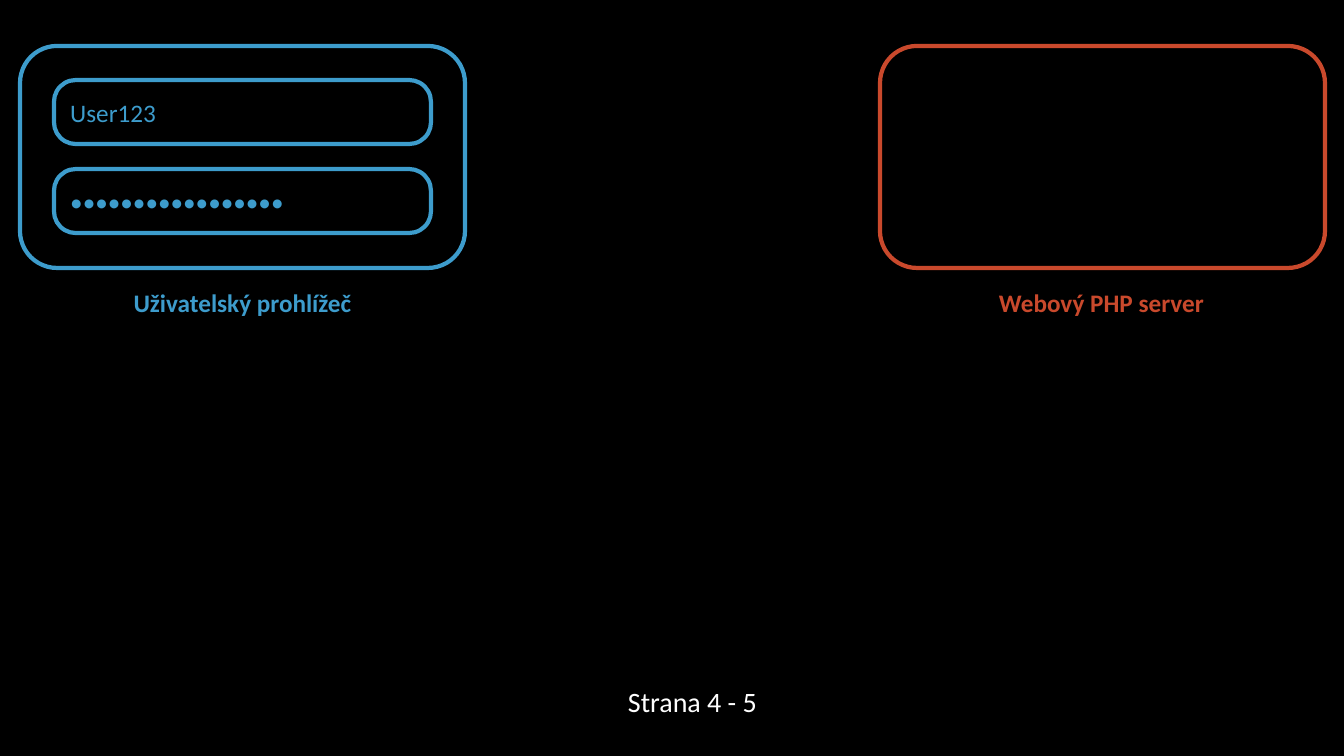
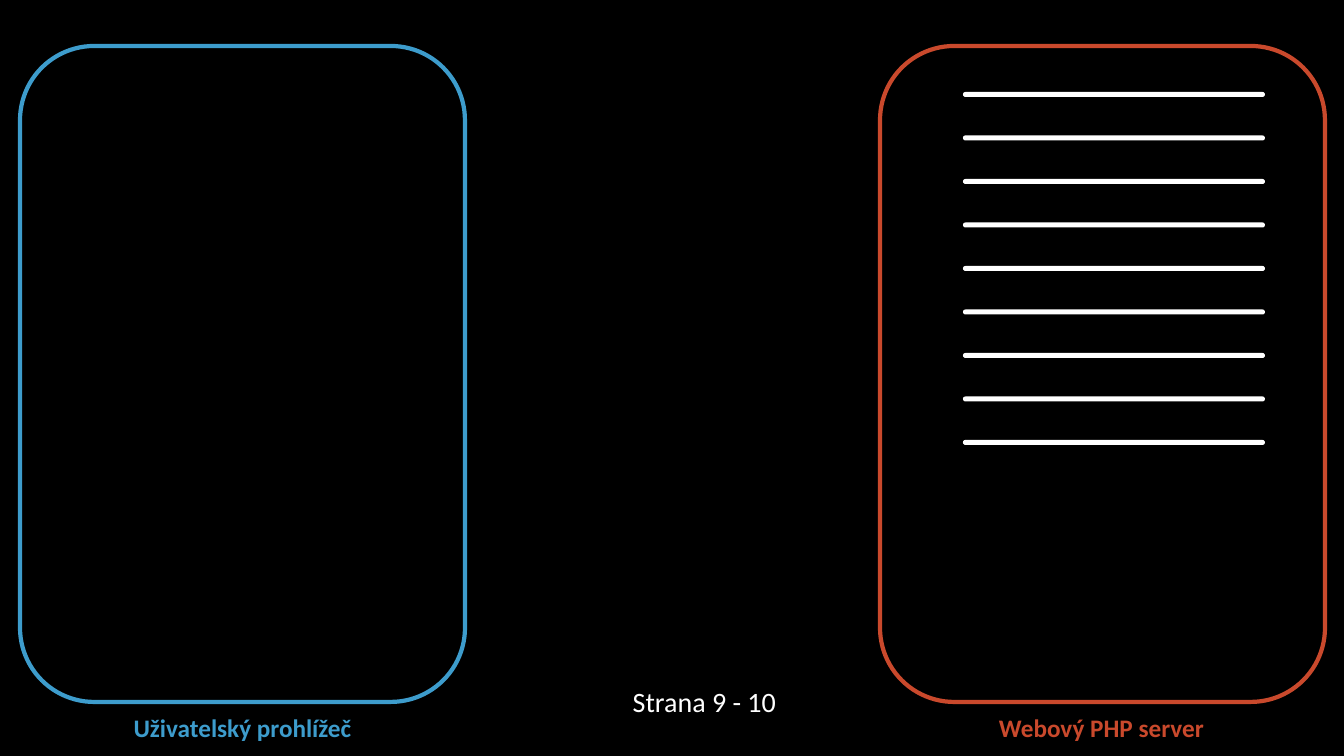
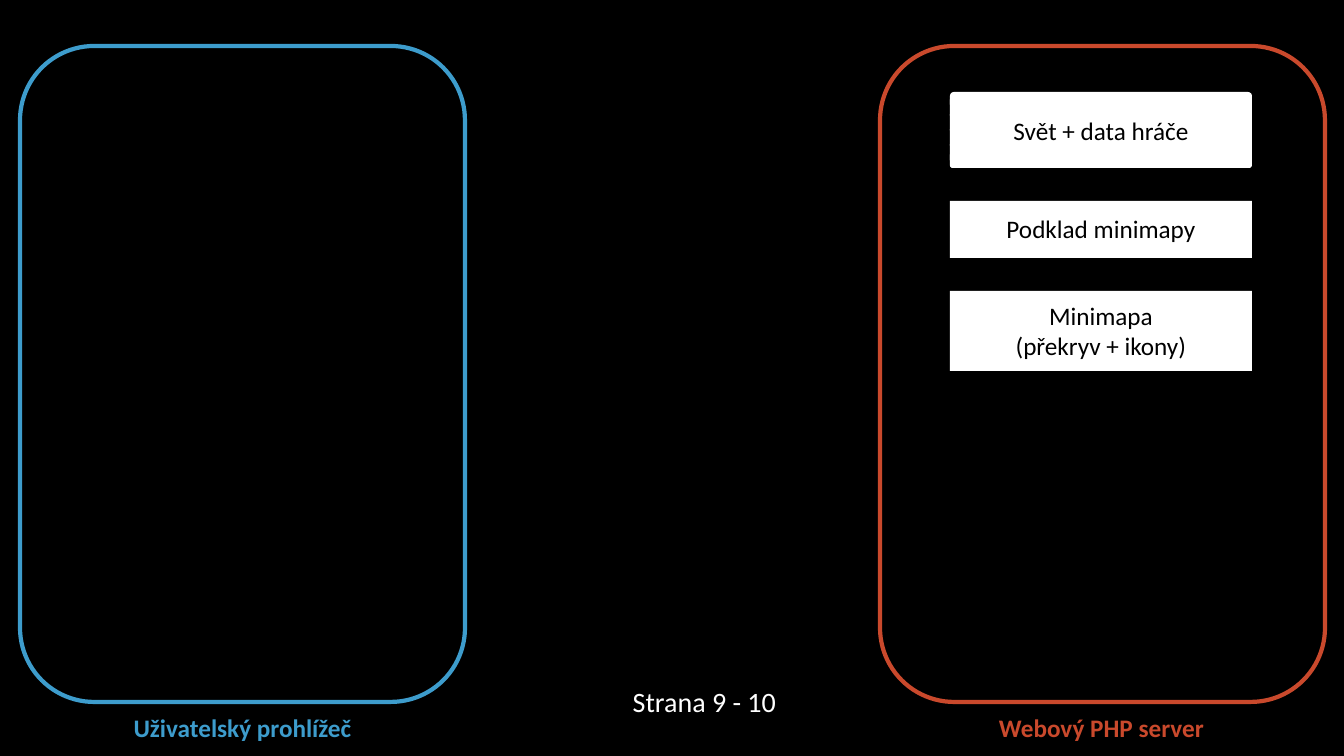
from pptx import Presentation
from pptx.dml.color import RGBColor
from pptx.enum.shapes import MSO_SHAPE
from pptx.enum.text import MSO_ANCHOR, MSO_AUTO_SIZE, PP_ALIGN
from pptx.util import Emu, Pt

# Content
COLORS = {"browser": "3D9CCC", "server": "C9492C", "white": "FFFFFF", "black": "000000"}
FONT = "Calibri"
# name, colour, panel left, label left
SIDES = [("Uživatelský prohlížeč", "browser", 20, 20), ("Webový PHP server", "server", 880, 879)]
LOGIN_FIELDS = ["User123", "•" * 17]
DATA_LINES = 9
STRIP_CORNERS = [0.24, 0, 0.5, 0, 0.5, 0, 0.5, 0, 0.17]
LAYER_CARDS = [(201, 57), (291, 80)]  # top, height
# lines of text, top, height
LAYER_LABELS = [
    (["Svět + data hráče"], 110, 40),
    (["Podklad minimapy"], 208, 40),
    (["Minimapa", "(překryv + ikony)"], 295, 72),
]

# Layout in px
SLIDE_W, SLIDE_H = 1344, 756
EMU_PER_PX = 914400 / 100.8
PANEL_TOP, PANEL_W, PANEL_CORNER = 46, 445, 0.1667
SHORT_PANEL, TALL_PANEL = 222, 656
FIELD_LEFT, FIELD_TOP, FIELD_W, FIELD_H, FIELD_PITCH = 54, 80, 377, 64, 89
STACK_TOP = 92
DATA_LEFT, DATA_W, DATA_H, DATA_SPAN = 963, 302, 5, 348
LAYER_LEFT, LAYER_W, STRIP_H, STRIP_SPAN = 950, 302, 16, 60


def px(length):
    return Emu(round(length * EMU_PER_PX))


def rgb(color):
    return RGBColor.from_string(COLORS[color])


def spread(count, span):
    """Tops of evenly spaced parts, the first at STACK_TOP."""
    return [STACK_TOP + i * span / (count - 1) for i in range(count)]


def write(frame, lines, color, size=18, bold=False, align=PP_ALIGN.CENTER):
    frame.word_wrap = True
    paragraph = frame.paragraphs[0]
    paragraph.alignment = align
    for i, line in enumerate(lines):
        if i:
            paragraph.add_line_break()
        run = paragraph.add_run()
        run.text = line
        run.font.name = FONT
        run.font.size = Pt(size)
        run.font.bold = bold
        run.font.color.rgb = rgb(color)


def add_label(slide, box, lines, color, **style):
    label = slide.shapes.add_textbox(*map(px, box))
    write(label.text_frame, lines, color, **style)
    label.text_frame.auto_size = MSO_AUTO_SIZE.SHAPE_TO_FIT_TEXT


def add_rounded(slide, box, corner, fill=None, outline=None):
    rounded = slide.shapes.add_shape(MSO_SHAPE.ROUNDED_RECTANGLE, *map(px, box))
    rounded.adjustments[0] = corner
    rounded.shadow.inherit = False
    if fill:
        rounded.fill.solid()
        rounded.fill.fore_color.rgb = rgb(fill)
    else:
        rounded.fill.background()
    if outline:
        rounded.line.color.rgb = rgb(outline)
        rounded.line.width = Pt(3)
    else:
        rounded.line.fill.background()
    rounded.text_frame.vertical_anchor = MSO_ANCHOR.MIDDLE
    return rounded


def add_scene(prs, panel_h, label_top, pages, pages_left):
    """Browser and server panels with their labels and the page reference."""
    slide = prs.slides.add_slide(prs.slide_layouts[6])
    for name, color, left, label_left in SIDES:
        add_rounded(slide, (left, PANEL_TOP, PANEL_W, panel_h), PANEL_CORNER, outline=color)
        add_label(slide, (label_left, label_top, PANEL_W, 40), [name], color, bold=True)
    add_label(slide, (pages_left, 680, 190, 44), [pages], "white",
              size=20, align=PP_ALIGN.RIGHT)
    return slide


def main():
    prs = Presentation()
    prs.slide_width, prs.slide_height = px(SLIDE_W), px(SLIDE_H)
    backdrop = prs.slide_master.background.fill
    backdrop.solid()
    backdrop.fore_color.rgb = rgb("black")

    # Login form
    login = add_scene(prs, SHORT_PANEL, 282, "Strana 4 - 5", 577)
    for i, text in enumerate(LOGIN_FIELDS):
        box = (FIELD_LEFT, FIELD_TOP + i * FIELD_PITCH, FIELD_W, FIELD_H)
        field = add_rounded(login, box, 0.34, outline="browser")
        write(field.text_frame, [text], "browser", align=PP_ALIGN.LEFT)

    # Lines of data on the server
    data = add_scene(prs, TALL_PANEL, 707, "Strana 9 - 10", 596)
    for top in spread(DATA_LINES, DATA_SPAN):
        add_rounded(data, (DATA_LEFT, top, DATA_W, DATA_H), 0.5, fill="white")

    # Layers on the server: the data lines pushed together, then two cards
    layers = add_scene(prs, TALL_PANEL, 707, "Strana 9 - 10", 596)
    for top, corner in zip(spread(len(STRIP_CORNERS), STRIP_SPAN), STRIP_CORNERS):
        add_rounded(layers, (LAYER_LEFT, top, LAYER_W, STRIP_H), corner, fill="white")
    for top, height in LAYER_CARDS:
        add_rounded(layers, (LAYER_LEFT, top, LAYER_W, height), 0, fill="white")
    for lines, top, height in LAYER_LABELS:
        add_label(layers, (LAYER_LEFT, top, LAYER_W, height), lines, "black")

    prs.save("out.pptx")


if __name__ == "__main__":
    main()
